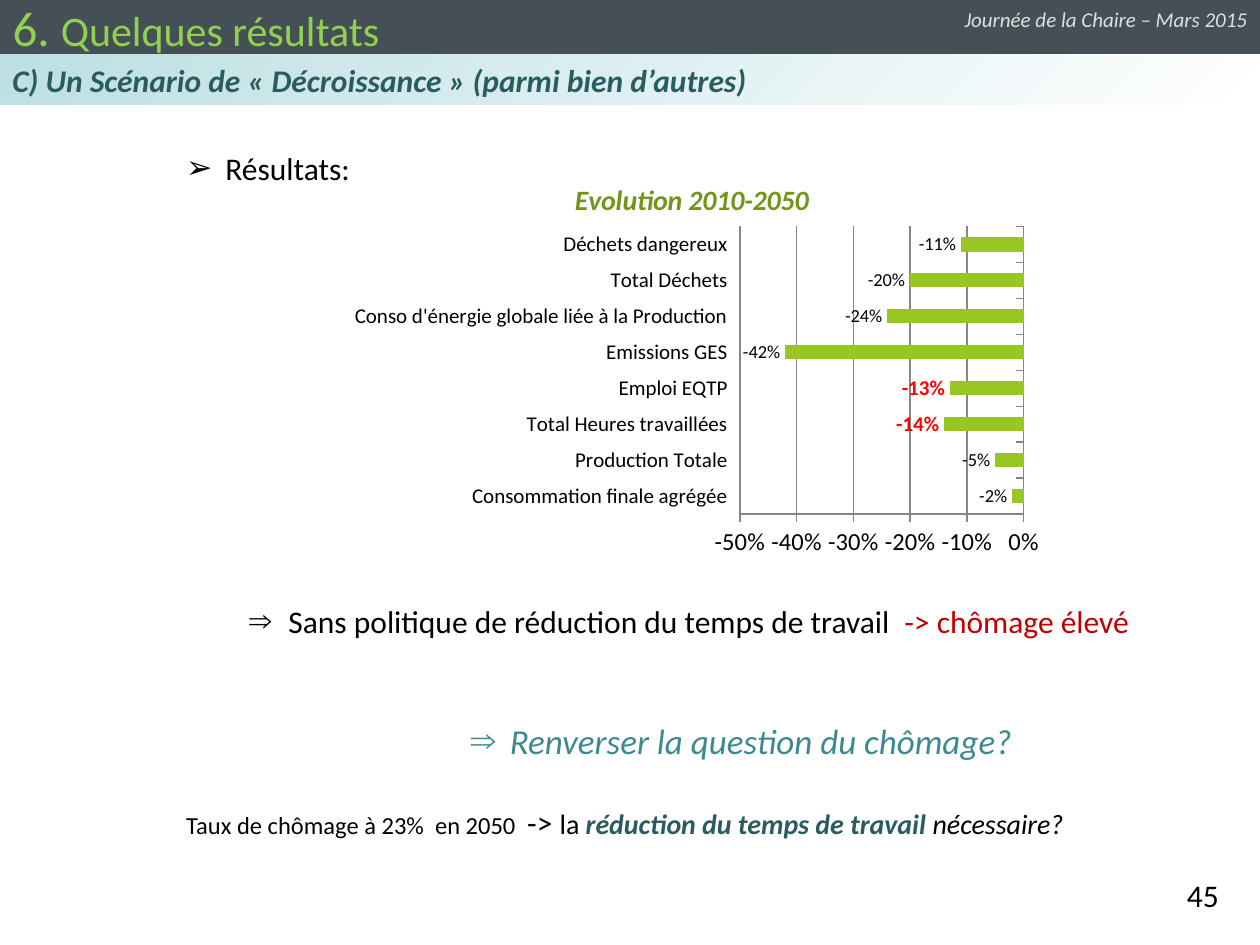
from collections import namedtuple

from lxml import etree
from pptx import Presentation
from pptx.chart.data import CategoryChartData
from pptx.dml.color import RGBColor
from pptx.enum.chart import (XL_CHART_TYPE, XL_LABEL_POSITION, XL_TICK_LABEL_POSITION,
                             XL_TICK_MARK)
from pptx.enum.shapes import MSO_SHAPE
from pptx.enum.text import MSO_ANCHOR, MSO_AUTO_SIZE, PP_ALIGN
from pptx.oxml import parse_xml
from pptx.oxml.ns import nsdecls, qn
from pptx.util import Cm, Pt

FONT = "Calibri"
BLACK = RGBColor(0x00, 0x00, 0x00)
WHITE = RGBColor(0xFF, 0xFF, 0xFF)
SLATE = RGBColor(0x44, 0x4F, 0x56)
PALE_GREY = RGBColor(0xDD, 0xE1, 0xE4)
PALE_TEAL = RGBColor(0xBD, 0xDF, 0xE3)
TEAL = RGBColor(0x3D, 0x89, 0x91)
DARK_TEAL = RGBColor(0x29, 0x5B, 0x60)
TITLE_GREEN = RGBColor(0x92, 0xD0, 0x50)
CHART_TITLE_GREEN = RGBColor(0x72, 0x95, 0x1A)
BAR_GREEN = RGBColor(0x98, 0xC7, 0x23)
GRID_GREY = RGBColor(0x86, 0x86, 0x86)
DARK_RED = RGBColor(0xC0, 0x00, 0x00)
RED = RGBColor(0xFF, 0x00, 0x00)

LEFT, CENTER, RIGHT = PP_ALIGN.LEFT, PP_ALIGN.CENTER, PP_ALIGN.RIGHT
TOP, MIDDLE = MSO_ANCHOR.TOP, MSO_ANCHOR.MIDDLE
OUTSIDE_END = XL_LABEL_POSITION.OUTSIDE_END

Box = namedtuple("Box", "left top width height")

RESULTS = [
    ("Consommation finale agrégée", -0.02),
    ("Production Totale", -0.05),
    ("Total Heures travaillées", -0.14),
    ("Emploi EQTP", -0.13),
    ("Emissions GES", -0.42),
    ("Conso d'énergie globale liée à la Production", -0.24),
    ("Total Déchets", -0.20),
    ("Déchets dangereux", -0.11),
]
HIGHLIGHTED = ("Total Heures travaillées", "Emploi EQTP")


def style_font(font, size, color=BLACK, bold=False, italic=False):
    font.name = FONT
    font.size = Pt(size)
    font.color.rgb = color
    font.bold = bold
    font.italic = italic


def write(paragraph, text, **style):
    run = paragraph.add_run()
    run.text = text
    style_font(run.font, **style)


def format_paragraph(paragraph, align=LEFT, before=0, bullet=None, margin=0, hanging=0):
    properties = paragraph._p.get_or_add_pPr()
    properties.set("marL", str(Cm(margin)))
    properties.set("indent", str(-Cm(hanging)))
    if bullet:
        etree.SubElement(properties, qn("a:buChar")).set("char", bullet)
    else:
        etree.SubElement(properties, qn("a:buNone"))
    paragraph.alignment = align
    paragraph.space_before = Pt(before)


def place(shape, box):
    shape.left, shape.top, shape.width, shape.height = (Cm(length) for length in box)


def set_frame(shape, anchor):
    frame = shape.text_frame
    frame.word_wrap = True
    frame.auto_size = MSO_AUTO_SIZE.NONE
    frame.vertical_anchor = anchor
    return frame


def add_text_box(slide, box, text, **style):
    """Add a one-line, right-aligned text box."""
    shape = slide.shapes.add_textbox(*(Cm(length) for length in box))
    paragraph = set_frame(shape, TOP).paragraphs[0]
    paragraph.alignment = RIGHT
    write(paragraph, text, **style)


def add_header(slide, box):
    """Fill the title band, the gradient band below it and the event label."""
    band_height = box.height * 0.52
    title = slide.shapes.title
    place(title, Box(box.left, box.top, box.width, band_height))
    title.fill.solid()
    title.fill.fore_color.rgb = SLATE
    paragraph = set_frame(title, MIDDLE).paragraphs[0]
    paragraph.alignment = LEFT
    write(paragraph, "6. ", size=28, color=TITLE_GREEN)
    write(paragraph, "Quelques résultats", size=24, color=TITLE_GREEN)

    subtitle = slide.shapes.add_shape(MSO_SHAPE.RECTANGLE, 0, 0, 0, 0)
    place(subtitle, Box(box.left, box.top + band_height, box.width, box.height - band_height))
    subtitle.shadow.inherit = False
    subtitle.line.fill.background()
    subtitle.fill.gradient()
    subtitle.fill.gradient_angle = 315
    for stop, color in zip(subtitle.fill.gradient_stops, (PALE_TEAL, WHITE)):
        stop.color.rgb = color
    paragraph = set_frame(subtitle, MIDDLE).paragraphs[0]
    paragraph.alignment = LEFT
    write(paragraph, "C) Un Scénario de « Décroissance » (parmi bien d’autres)",
          size=18, color=DARK_TEAL, bold=True, italic=True)

    label_width = 8.89
    add_text_box(slide, Box(box.left + box.width - label_width, box.top, label_width, 0.76),
                 "Journée de la Chaire – Mars 2015", size=12, color=PALE_GREY, italic=True)


def add_findings(slide, box):
    """Fill the body; the first gap leaves room for the chart."""
    body = slide.placeholders[1]
    place(body, box)
    frame = set_frame(body, TOP)
    paragraph = frame.paragraphs[0]
    format_paragraph(paragraph, bullet="➢", margin=0.79, hanging=0.79)
    write(paragraph, "Résultats:", size=18)

    paragraph = frame.add_paragraph()
    format_paragraph(paragraph, before=237.5, bullet="⇒", margin=2.06, hanging=0.79)
    write(paragraph, "Sans politique de réduction du temps de travail  ", size=18)
    write(paragraph, "-> chômage élevé", size=18, color=DARK_RED)

    paragraph = frame.add_paragraph()
    format_paragraph(paragraph, CENTER, before=45.5, bullet="⇒", margin=2.06, hanging=0.79)
    write(paragraph, "Renverser la question du chômage?", size=20, color=TEAL, italic=True)

    paragraph = frame.add_paragraph()
    format_paragraph(paragraph, before=23.5)
    write(paragraph, "Taux de chômage à 23%  en 2050  ", size=14)
    write(paragraph, "-> ", size=18)
    write(paragraph, "la ", size=16)
    write(paragraph, "réduction du temps de travail ", size=16, color=DARK_TEAL,
          bold=True, italic=True)
    write(paragraph, "nécessaire?", size=16, italic=True)


def make_layout(**fractions):
    """Return a manual chart layout, in fractions of the chart's size."""
    target = '<c:layoutTarget val="inner"/>' if "w" in fractions else ""
    modes = "".join(f'<c:{axis}Mode val="edge"/>' for axis in "xy")
    lengths = "".join(f'<c:{key} val="{value}"/>' for key, value in fractions.items())
    return parse_xml(f'<c:layout {nsdecls("c")}><c:manualLayout>{target}{modes}{lengths}'
                     '</c:manualLayout></c:layout>')


def add_results_chart(slide, box):
    data = CategoryChartData(number_format="0%")
    data.categories = [name for name, _ in RESULTS]
    data.add_series("Evolution", [value for _, value in RESULTS])
    chart = slide.shapes.add_chart(XL_CHART_TYPE.BAR_CLUSTERED,
                                   *(Cm(length) for length in box), data).chart
    style_font(chart.font, size=14)
    chart.has_legend = False
    chart.has_title = True
    write(chart.chart_title.text_frame.paragraphs[0], "Evolution 2010-2050",
          size=16, color=CHART_TITLE_GREEN, bold=True, italic=True)
    title = chart.chart_title._element
    plot_area = chart._chartSpace.chart.plotArea
    for parent in (title, plot_area):
        for layout in parent.findall(qn("c:layout")):
            parent.remove(layout)
    title.find(qn("c:tx")).addnext(make_layout(x=0.32, y=0.06))
    plot_area.insert(0, make_layout(x=0.56, y=0.18, w=0.4, h=0.69))

    categories, values = chart.category_axis, chart.value_axis
    categories.tick_label_position = XL_TICK_LABEL_POSITION.LOW
    style_font(categories.tick_labels.font, size=12)
    values.minimum_scale, values.maximum_scale, values.major_unit = -0.5, 0, 0.1
    values.tick_labels.number_format = "0%"
    values.tick_labels.number_format_is_linked = False
    values.has_major_gridlines = True
    values.major_gridlines.format.line.color.rgb = GRID_GREY
    for axis in (categories, values):
        axis.major_tick_mark = XL_TICK_MARK.OUTSIDE
        axis.format.line.color.rgb = GRID_GREY

    plot = chart.plots[0]
    plot.gap_width = 150
    plot.vary_by_categories = False
    series = plot.series[0]
    series.format.fill.solid()
    series.format.fill.fore_color.rgb = BAR_GREEN
    labels = series.data_labels
    labels.show_value = True
    labels.number_format = "0%"
    labels.number_format_is_linked = False
    labels.position = OUTSIDE_END
    style_font(labels.font, size=10.5)
    for index, (name, _) in enumerate(RESULTS):
        if name in HIGHLIGHTED:
            label = series.points[index].data_label
            style_font(label.font, size=12, color=RED, bold=True)
            label.position = OUTSIDE_END


def main():
    presentation = Presentation()
    presentation.slide_width, presentation.slide_height = Cm(25.4), Cm(19.05)
    slide = presentation.slides.add_slide(presentation.slide_layouts[1])
    add_header(slide, Box(0, 0, 25.4, 2.11))
    add_findings(slide, Box(3.5, 2.87, 21.62, 15))
    add_results_chart(slide, Box(6.91, 3.05, 14.3, 8.41))
    add_text_box(slide, Box(23.19, 17.53, 1.63, 1.02), "45", size=18)
    presentation.save("out.pptx")


if __name__ == "__main__":
    main()
